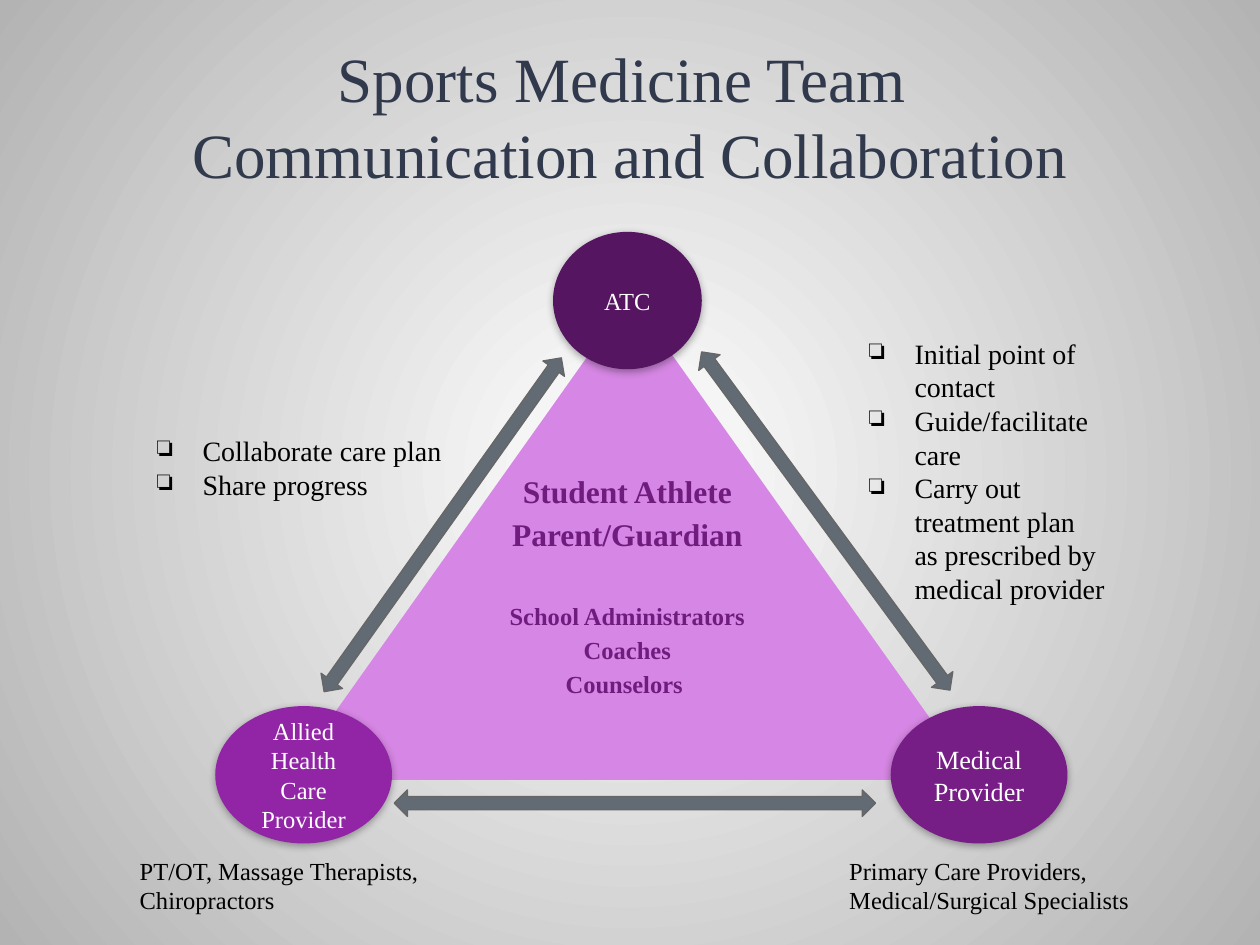
from dataclasses import dataclass

from lxml import etree
from pptx import Presentation
from pptx.dml.color import RGBColor
from pptx.enum import shapes, text
from pptx.oxml import ns
from pptx.util import Pt


@dataclass(frozen=True)
class Theme:
    font: str = "Times New Roman"
    title: str = "31394D"
    body: str = "000000"
    white: str = "FFFFFF"
    bg_edge: str = "B3B3B3"
    triangle: str = "D686E4"
    center: str = "701C7F"
    atc: str = "551561"
    allied: str = "9225A5"
    medical: str = "761E86"
    arrow: str = "626B73"
    arrow_line: str = "666666"
    shadow: str = "212121"
    title_size: float = 36
    center_size: float = 18
    list_size: float = 16
    medical_size: float = 15
    small_size: float = 14


T = Theme()
rgb = RGBColor.from_string


def child(parent, tag, **attrs):
    return etree.SubElement(parent, ns.qn(tag), {k: str(v) for k, v in attrs.items()})


def within(box, x, y, w, h):
    """Turn a place inside box into a place on the slide."""
    return box[0] + x, box[1] + y, w, h


def write(shape, lines, size, color, align=None, anchor=None, inset=7.2):
    """Fill a shape with one paragraph per line and return the paragraphs."""
    tf = shape.text_frame
    tf.word_wrap = True
    tf.vertical_anchor = anchor
    tf.margin_left = tf.margin_right = Pt(7.2)
    tf.margin_top = tf.margin_bottom = Pt(inset)
    tf.text = "\n".join(lines)
    for p in tf.paragraphs:
        p.alignment = align
        p.font.name, p.font.size = T.font, Pt(size)
        p.font.color.rgb = rgb(color)
    return tf.paragraphs


def add_text(s, box, lines, size, color, **options):
    return write(s.shapes.add_textbox(*map(Pt, box)), lines, size, color, **options)


def add_shape(s, kind, box, color):
    sp = s.shapes.add_shape(kind, *map(Pt, box))
    sp.shadow.inherit = False
    sp.fill.solid()
    sp.fill.fore_color.rgb = rgb(color)
    sp.line.fill.background()
    return sp


def paint_background(s):
    fill = s.background.fill
    fill.gradient()
    for stop, color in zip(fill.gradient_stops, (T.white, T.bg_edge)):
        stop.color.rgb = rgb(color)
    grad = s.background._cSld.find(".//" + ns.qn("a:gradFill"))
    grad.remove(grad.find(ns.qn("a:lin")))
    circle = child(grad, "a:path", path="circle")
    child(circle, "a:fillToRect", l=50000, t=50000, r=50000, b=50000)


def add_title(s, box):
    add_text(s, box, ["Sports Medicine Team ", "Communication and Collaboration"],
             T.title_size, T.title, align=text.PP_ALIGN.CENTER,
             anchor=text.MSO_ANCHOR.MIDDLE, inset=3.6)


def add_member(s, box, lines, size, color):
    """A shadowed ellipse for one member of the team."""
    sp = add_shape(s, shapes.MSO_SHAPE.OVAL, box, color)
    effects = sp._element.spPr.find(ns.qn("a:effectLst"))
    shadow = child(effects, "a:outerShdw", blurRad=Pt(4.5), dist=Pt(1.5),
                   dir=5400000, algn="bl", rotWithShape=0)
    child(child(shadow, "a:srgbClr", val=T.shadow), "a:alpha", val=38000)
    write(sp, lines, size, T.white, align=text.PP_ALIGN.CENTER,
          anchor=text.MSO_ANCHOR.MIDDLE)


def add_arrow(s, box, angle):
    sp = add_shape(s, shapes.MSO_SHAPE.LEFT_RIGHT_ARROW, box, T.arrow)
    sp.line.color.rgb = rgb(T.arrow_line)
    sp.line.width = Pt(0.75)
    sp.rotation = angle


def add_center_text(s, box):
    ps = add_text(s, box, ["Student Athlete", "Parent/Guardian", "School Administrators",
                           "Coaches", "Counselors "],
                  T.small_size, T.center, align=text.PP_ALIGN.CENTER)
    for p in ps:
        p.font.bold = True
        p.line_spacing = 1.15
    for p in ps[:2]:
        p.font.size = Pt(T.center_size)
    ps[2].space_before = Pt(25)


def add_team_diagram(s, box):
    add_shape(s, shapes.MSO_SHAPE.ISOSCELES_TRIANGLE,
              within(box, 41, 36.7, 392.4, 276.5), T.triangle)
    add_center_text(s, within(box, 126.8, 126.7, 217.4, 177))

    node_w, node_h = 101, 78.5
    low = box[3] - node_h
    add_member(s, within(box, box[2] - node_w, low, node_w, node_h),
               ["Medical", "Provider"], T.medical_size, T.medical)
    add_member(s, within(box, 0, low, node_w, node_h),
               ["Allied Health Care Provider"], T.small_size, T.allied)
    for x, y, length, angle in ((229, 157.7, 239.8, 53.7),
                                (13, 159.8, 234, 125.4),
                                (102.3, 318.9, 275, 0)):
        add_arrow(s, within(box, x, y, length, 15.1), angle)
    add_member(s, within(box, 193, 0, 85, node_h), ["ATC"], T.small_size, T.atc)


def add_checklist(s, box, items):
    for p in add_text(s, box, items, T.list_size, T.body):
        pPr = p._p.get_or_add_pPr()
        pPr.set("marL", str(Pt(36)))
        pPr.set("indent", str(-Pt(26)))
        bullet = etree.Element(ns.qn("a:buChar"), char="❏")
        pPr.insert_element_before(bullet, "a:tabLst", "a:defRPr", "a:extLst")


def add_caption(s, box, lines):
    add_text(s, box, lines, T.small_size, T.body)


def main():
    prs = Presentation()
    prs.slide_width, prs.slide_height = Pt(720), Pt(540)
    s = prs.slides.add_slide(prs.slide_layouts[6])

    paint_background(s)
    add_title(s, (36, 21, 648, 90))
    add_team_diagram(s, (123, 132.5, 487, 349.5))
    add_checklist(s, (479.5, 185, 159, 145),
                  ["Initial point of contact", "Guide/facilitate care",
                   "Carry out treatment plan as prescribed by medical provider"])
    add_checklist(s, (72.7, 240.5, 201, 70), ["Collaborate care plan", "Share progress"])
    add_caption(s, (478.2, 481.7, 194.4, 52),
                ["Primary Care Providers, Medical/Surgical Specialists"])
    add_caption(s, (72.7, 481.7, 201, 52), ["PT/OT, Massage Therapists,", "Chiropractors"])

    prs.save("out.pptx")


if __name__ == "__main__":
    main()
